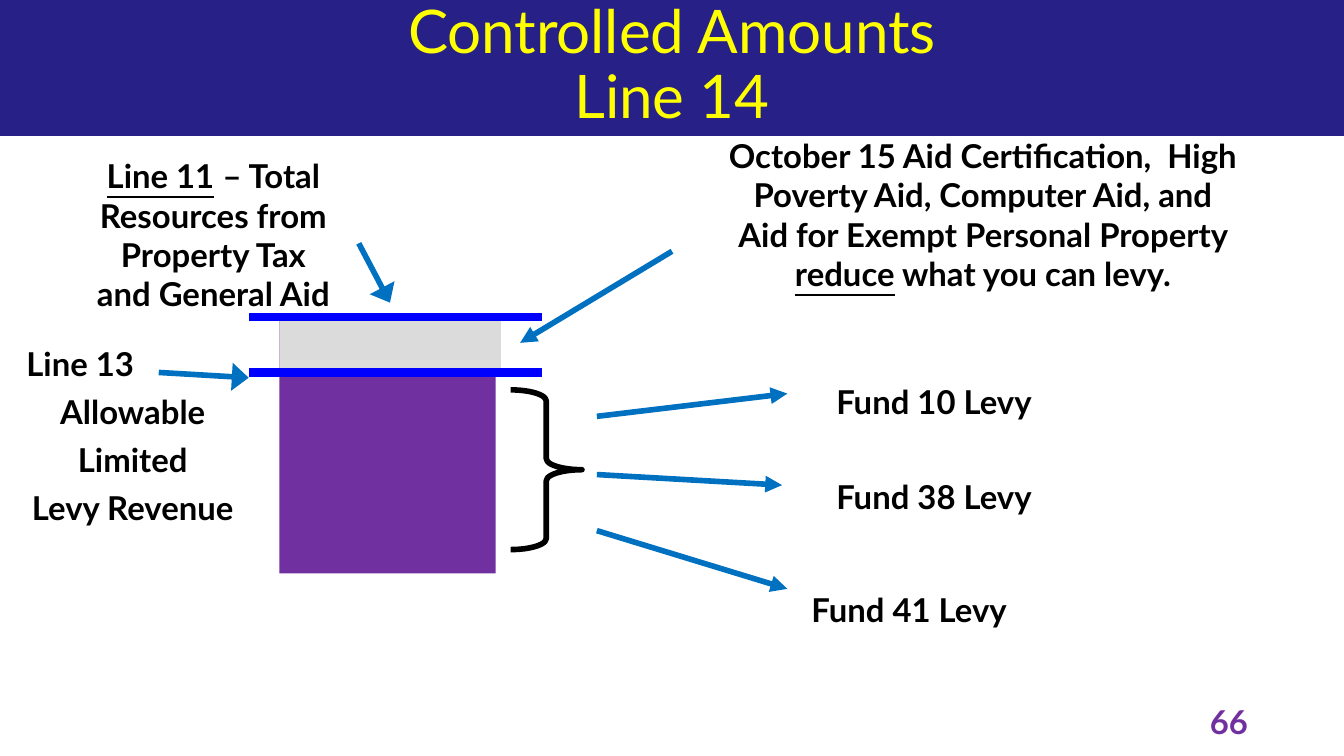
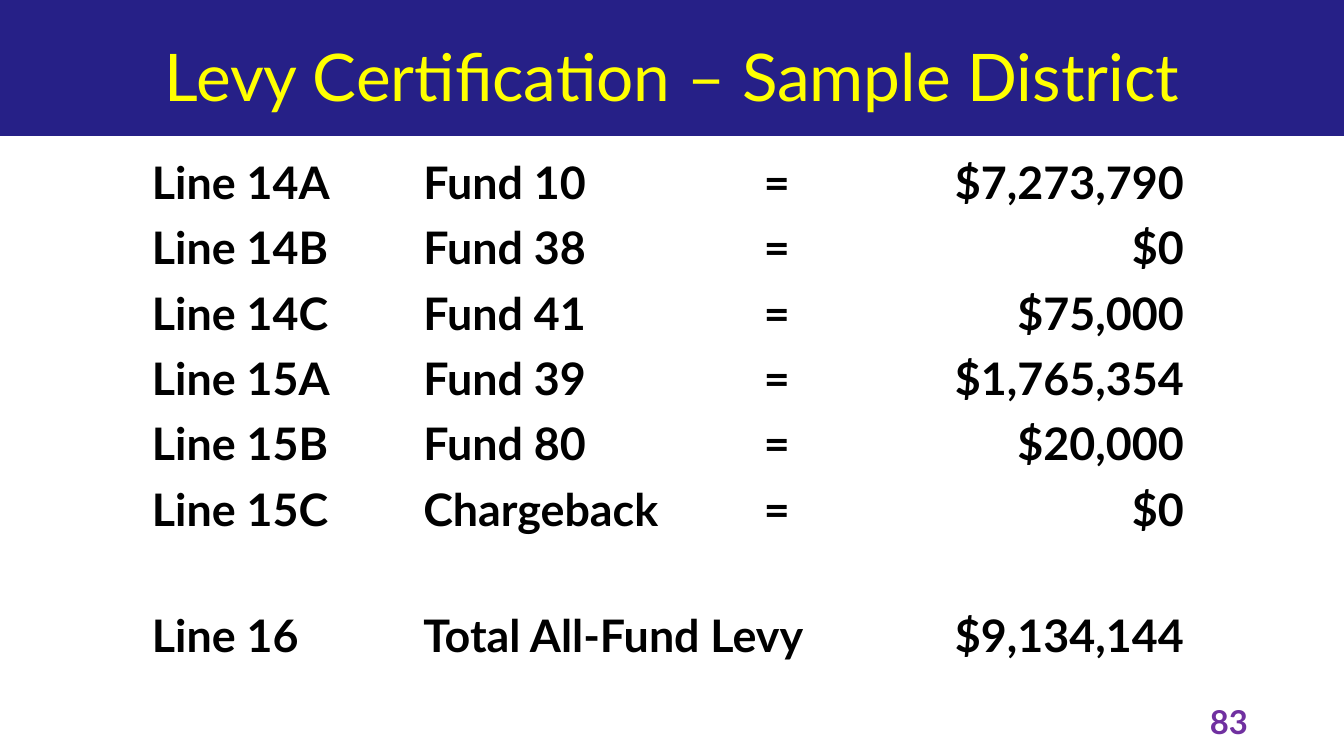
from dataclasses import dataclass

import lxml.etree
import pptx
import pptx.dml.color
import pptx.enum.shapes
import pptx.enum.text
import pptx.oxml.ns
import pptx.util

Cm, Pt = pptx.util.Cm, pptx.util.Pt
RGB = pptx.dml.color.RGBColor.from_string
SHAPE = pptx.enum.shapes.MSO_SHAPE
ALIGN = pptx.enum.text.PP_ALIGN
ANCHOR = pptx.enum.text.MSO_ANCHOR
qn = pptx.oxml.ns.qn


@dataclass(frozen=True)
class Theme:
    font: str = "Lato"
    band: str = "262087"
    title: str = "FFFF00"
    text: str = "000000"
    purple: str = "7030A0"
    aid: str = "DBDBDB"
    arrow: str = "0070C0"
    level: str = "0000FF"
    label_size: float = 17.6
    table_size: float = 24


theme = Theme()


def add_text(s, box, paragraphs, size=theme.label_size, color=theme.text, bold=True):
    tf = s.shapes.add_textbox(*map(Cm, box)).text_frame
    tf.word_wrap = True
    for i, runs in enumerate(paragraphs):
        p = tf.paragraphs[0] if i == 0 else tf.add_paragraph()
        p.alignment = ALIGN.CENTER
        p.font.name, p.font.size, p.font.bold = theme.font, Pt(size), bold
        p.font.color.rgb = RGB(color)
        for text, underline in runs:
            r = p.add_run()
            r.text = text
            if underline:
                r.font.underline = True
    return tf


def add_line(s, ends, color, width, head=None):
    line = s.shapes.add_connector(pptx.enum.shapes.MSO_CONNECTOR.STRAIGHT, *map(Cm, ends))
    line.line.color.rgb = RGB(color)
    line.line.width = Pt(width)
    if head:
        ln = line.line._get_or_add_ln()
        lxml.etree.SubElement(ln, qn("a:tailEnd"), type="triangle", w=head, len="med")
    lxml.etree.SubElement(line._element.spPr, qn("a:effectLst"))


prs = pptx.Presentation()
prs.slide_width, prs.slide_height = Cm(25.4), Cm(14.29)

slides = []
for lines, top, height, size, number in [
    (["Controlled Amounts", "Line 14"], 0.08, 2.36, 32.2, "66"),
    (["Levy Certification – Sample District"], 0.64, 1.75, 35.2, "83"),
]:
    s = prs.slides.add_slide(prs.slide_layouts[6])
    band = s.shapes.add_shape(SHAPE.RECTANGLE, 0, 0, prs.slide_width, Cm(2.57))
    band.shadow.inherit = False
    band.fill.solid()
    band.fill.fore_color.rgb = RGB(theme.band)
    band.line.fill.background()
    tf = add_text(s, (0, top, 25.4, height), [[(line, False)] for line in lines], size, theme.title, False)
    tf.vertical_anchor = ANCHOR.MIDDLE
    for p in tf.paragraphs:
        p.line_spacing = 0.9
    add_text(s, (21.79, 13.13, 2.87, 0.86), [[(number, False)]], color=theme.purple)
    slides.append(s)

s, levy_slide = slides

for top, width, height, color in [
    (5.99, 4.09, 4.85, theme.purple),
    (5.99, 4.19, 1.09, theme.aid),
]:
    sp = s.shapes.add_shape(SHAPE.RECTANGLE, Cm(5.28), Cm(top), Cm(width), Cm(height))
    sp.shadow.inherit = False
    sp.fill.solid()
    sp.fill.fore_color.rgb = RGB(color)
    sp.line.fill.background()

brace = s.shapes.add_shape(SHAPE.RIGHT_BRACE, Cm(9.65), Cm(7.37), Cm(1.35), Cm(3.02))
brace.shadow.inherit = False
brace.adjustments[0] = 0.155
brace.fill.background()
brace.line.color.rgb = RGB(theme.text)
brace.line.width = Pt(3)

for y in (5.99, 7.04):
    add_line(s, (10.24, y, 4.7, y), theme.level, 4.5)

for ends, head in [
    ((6.78, 4.6, 7.37, 5.72), "lg"),
    ((3.0, 7.04, 4.7, 7.14), "lg"),
    ((12.7, 4.75, 9.83, 6.48), "med"),
    ((11.28, 7.87, 14.88, 7.44), "med"),
    ((11.28, 8.97, 14.78, 9.17), "med"),
    ((11.28, 10.03, 14.88, 11.13), "med"),
]:
    add_line(s, ends, theme.arrow, 3, head)

for fund, left, top, width in [
    ("Fund 10 Levy", 14.99, 7.09, 5.33),
    ("Fund 38 Levy", 14.99, 8.89, 5.33),
    ("Fund 41 Levy", 14.43, 11.02, 5.51),
]:
    add_text(s, (left, top, width, 1.02), [[(fund, False)]])

add_text(s, (13.46, 2.44, 10.24, 3.25), [[
    ("October 15 Aid Certification,  High Poverty Aid, Computer Aid, and Aid for Exempt Personal Property ", False),
    ("reduce", True),
    (" what you can levy.", False),
]])
add_text(s, (1.47, 2.82, 5.13, 3.25), [[
    ("Line 11", True),
    (" – Total Resources from Property Tax and General Aid", False),
]])
tf = add_text(s, (0.25, 6.38, 4.52, 3.63), [
    [(text, False)] for text in ("Line 13", "Allowable", "Limited", "Levy Revenue")
])
tf.paragraphs[0].alignment = ALIGN.LEFT
for p in tf.paragraphs[1:]:
    p.space_before = Pt(4.5)

levies = [
    ("Line 14A", "Fund 10", "=", "$7,273,790"),
    ("Line 14B", "Fund 38", "=", "$0"),
    ("Line 14C", "Fund 41", "=", "$75,000"),
    ("Line 15A", "Fund 39", "=", "$1,765,354"),
    ("Line 15B", "Fund 80", "=", "$20,000"),
    ("Line 15C", "Chargeback", "=", "$0"),
    ("", "", "", ""),
    ("Line 16", "Total All-Fund Levy", "", "$9,134,144"),
]
widths = (5.13, 5.64, 2.54, 6.65)
aligns = (ALIGN.LEFT, ALIGN.LEFT, ALIGN.CENTER, ALIGN.RIGHT)
row_height = 1.14
table = levy_slide.shapes.add_table(
    len(levies), len(widths), Cm(2.64), Cm(2.82), Cm(sum(widths)), Cm(row_height * len(levies))
).table
table.first_row = table.horz_banding = False
for column, width in zip(table.columns, widths):
    column.width = Cm(width)
for i, levy in enumerate(levies):
    table.rows[i].height = Cm(row_height)
    for j, text in enumerate(levy):
        cell = table.cell(i, j)
        cell.fill.background()
        cell.margin_left = cell.margin_right = Cm(0.23)
        cell.margin_top = cell.margin_bottom = Cm(0.11)
        if text:
            p = cell.text_frame.paragraphs[0]
            p.add_run().text = text
            p.alignment = aligns[j]
            p.font.name, p.font.size, p.font.bold = theme.font, Pt(theme.table_size), True
            p.font.color.rgb = RGB(theme.text)
table.cell(7, 1).merge(table.cell(7, 2))

prs.save("out.pptx")
